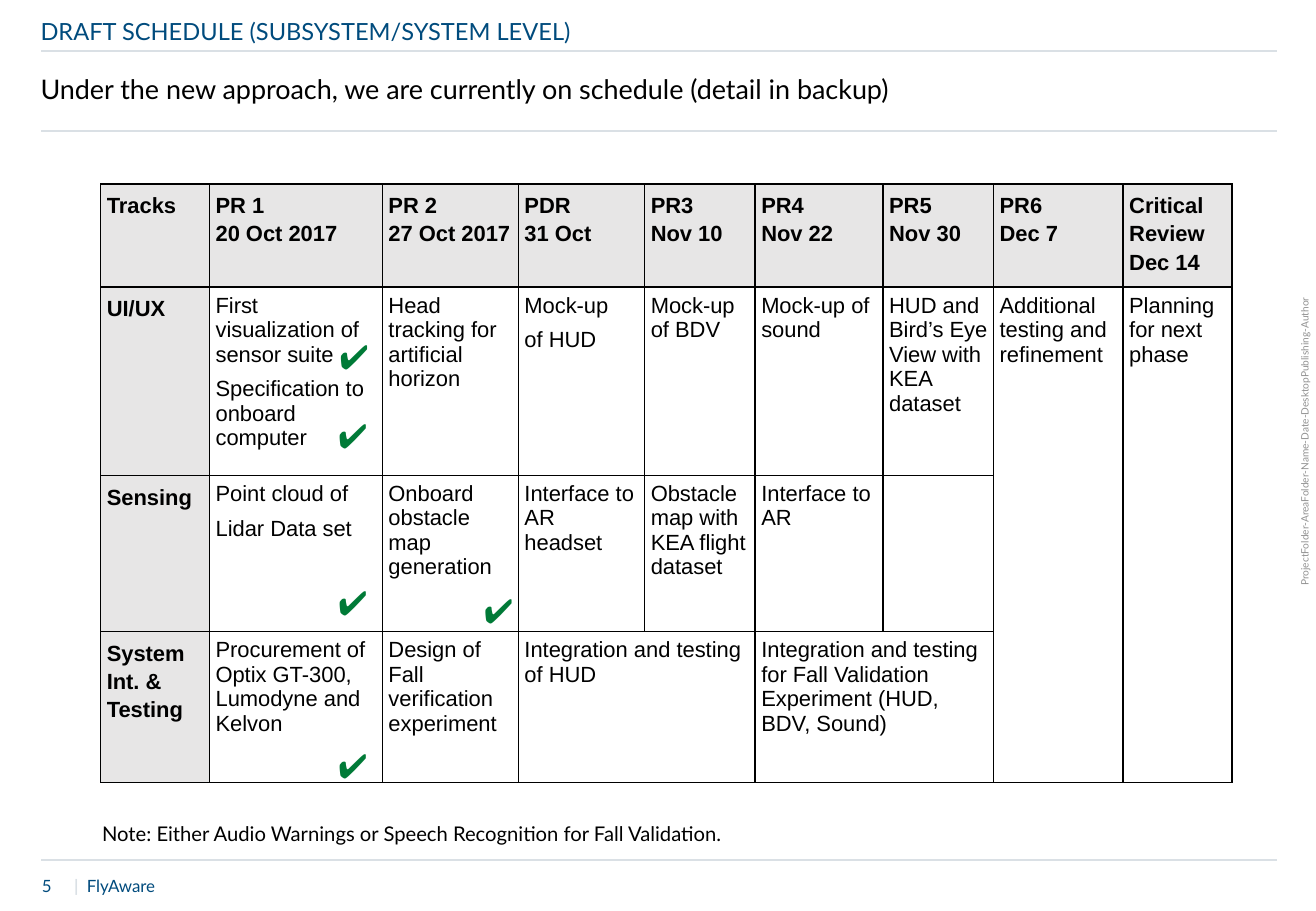
from lxml.etree import SubElement
from pptx import Presentation
from pptx.dml.color import RGBColor
from pptx.enum.shapes import MSO_CONNECTOR
from pptx.enum.text import MSO_ANCHOR, PP_ALIGN
from pptx.oxml.ns import qn
from pptx.util import Pt

COLORS = {
    "navy": "004B7D", "black": "000000", "gray": "919191",
    "rule": "DAE0E5", "header": "E7E6E6", "green": "007A37",
}

presentation = Presentation()
presentation.slide_width = Pt(780)
presentation.slide_height = Pt(540)
slide = presentation.slides.add_slide(presentation.slide_layouts[6])


def style_paragraph(paragraph, text, paragraph_format, font_format, color):
    run = paragraph.add_run()
    run.text = text
    for attribute, value in paragraph_format.items():
        setattr(paragraph, attribute, value)
    for attribute, value in font_format.items():
        setattr(run.font, attribute, value)
    run.font.color.rgb = RGBColor.from_string(COLORS[color])


def add_label(text, box, size, color, bold=False, align=PP_ALIGN.LEFT, spacing=0.9):
    label = slide.shapes.add_textbox(*[Pt(length) for length in box])
    frame_format = {
        "word_wrap": True, "vertical_anchor": MSO_ANCHOR.MIDDLE,
        "margin_left": 0, "margin_right": 0, "margin_top": 0, "margin_bottom": 0,
    }
    for attribute, value in frame_format.items():
        setattr(label.text_frame, attribute, value)
    style_paragraph(
        label.text_frame.paragraphs[0], text,
        {"alignment": align, "line_spacing": spacing},
        {"name": "Lato", "size": Pt(size), "bold": bold}, color,
    )
    return label


for rule_y in (30.24, 77.76, 509.76):
    rule = slide.shapes.add_connector(
        MSO_CONNECTOR.STRAIGHT, Pt(24.5), Pt(rule_y), Pt(756.7), Pt(rule_y))
    rule.line.color.rgb = RGBColor.from_string(COLORS["rule"])
    rule.line.width = Pt(1)
    SubElement(rule.element.spPr, qn("a:effectLst"))

add_label("DRAFT SCHEDULE (SUBSYSTEM/SYSTEM LEVEL)", (24, 6.5, 732, 24), 14, "navy", spacing=1.0)
add_label("Under the new approach, we are currently on schedule (detail in backup)",
          (24, 42.5, 732, 23), 16, "black")
add_label("5", (24.8, 517, 16, 18), 10, "navy")
add_label("|", (44, 517, 6, 18), 10, "rule", bold=True)
add_label("FlyAware", (51.5, 517, 80, 18), 10, "navy")
folder_label = add_label("ProjectFolder-AreaFolder-Name-Date-DesktopPublishing-Author",
                         (680.4, 254.9, 186.5, 13.7), 6, "gray", align=PP_ALIGN.CENTER)
folder_label.rotation = 270

column_widths = [64.5, 102.5, 80.6, 74.9, 65.5, 75.8, 65.5, 76.8, 64.5]
row_heights = [60.8, 111.6, 92.6, 89.5]
schedule = [
    ["Tracks", "PR 1\n20 Oct 2017", "PR 2\n27 Oct 2017", "PDR\n31 Oct", "PR3\nNov 10",
     "PR4\nNov 22", "PR5\nNov 30", "PR6\nDec 7", "Critical Review\nDec 14"],
    ["UI/UX", "First visualization of sensor suite\nSpecification to onboard computer",
     "Head tracking for artificial horizon", "Mock-up\nof HUD", "Mock-up of BDV",
     "Mock-up of sound", "HUD and Bird’s Eye View with KEA dataset",
     "Additional testing and refinement", "Planning for next phase"],
    ["Sensing", "Point cloud of\nLidar Data set", "Onboard obstacle map generation",
     "Interface to AR headset", "Obstacle map with KEA flight dataset",
     "Interface to AR", "", "", ""],
    ["System Int. &\nTesting", "Procurement of Optix GT-300, Lumodyne and Kelvon",
     "Design of Fall verification experiment", "Integration and testing of HUD", "",
     "Integration and testing for Fall Validation Experiment (HUD, BDV, Sound)",
     "", "", ""],
]
merges = [((1, 7), (3, 7)), ((1, 8), (3, 8)), ((3, 3), (3, 4)), ((3, 5), (3, 6))]

table = slide.shapes.add_table(
    len(row_heights), len(column_widths), Pt(59.7), Pt(109.2),
    Pt(sum(column_widths)), Pt(sum(row_heights))).table
table.first_row = False
table.horz_banding = False
for column, width in zip(table.columns, column_widths):
    column.width = Pt(width)
for row, height in zip(table.rows, row_heights):
    row.height = Pt(height)
for first, last in merges:
    table.cell(*first).merge(table.cell(*last))

cell_format = {
    "margin_left": Pt(3.6), "margin_right": Pt(3.6),
    "margin_top": Pt(3.6), "margin_bottom": Pt(3.6),
    "vertical_anchor": MSO_ANCHOR.TOP,
}
for row_index, row_texts in enumerate(schedule):
    for column_index, cell_text in enumerate(row_texts):
        cell = table.cell(row_index, column_index)
        heading = row_index == 0 or column_index == 0
        for attribute, value in cell_format.items():
            setattr(cell, attribute, value)
        for side in ("a:lnL", "a:lnR", "a:lnT", "a:lnB"):
            border = SubElement(cell._tc.get_or_add_tcPr(), qn(side), w=str(Pt(1)))
            border_fill = SubElement(border, qn("a:solidFill"))
            SubElement(border_fill, qn("a:srgbClr"), val=COLORS["black"])
        if heading:
            cell.fill.solid()
            cell.fill.fore_color.rgb = RGBColor.from_string(COLORS["header"])
        else:
            cell.fill.background()
        if not cell_text:
            continue
        for line_index, line_text in enumerate(cell_text.split("\n")):
            frame = cell.text_frame
            paragraph = frame.add_paragraph() if line_index else frame.paragraphs[0]
            spacing = {"line_spacing": 1.15} if heading else {"space_before": Pt(6)}
            style_paragraph(paragraph, line_text, spacing,
                            {"name": "Arial", "size": Pt(13), "bold": heading}, "black")

for check_x, check_y in [(194.4, 195.1), (193.7, 241.9), (193.7, 341.3),
                         (193.7, 437.8), (280.1, 345.6)]:
    add_label("✔", (check_x, check_y, 31, 31.7), 20, "green", bold=True,
              align=PP_ALIGN.CENTER, spacing=1.0)

add_label("Note: Either Audio Warnings or Speech Recognition for Fall Validation.",
          (60.5, 486.7, 400, 14.4), 12, "black", spacing=1.0)

presentation.save("out.pptx")
